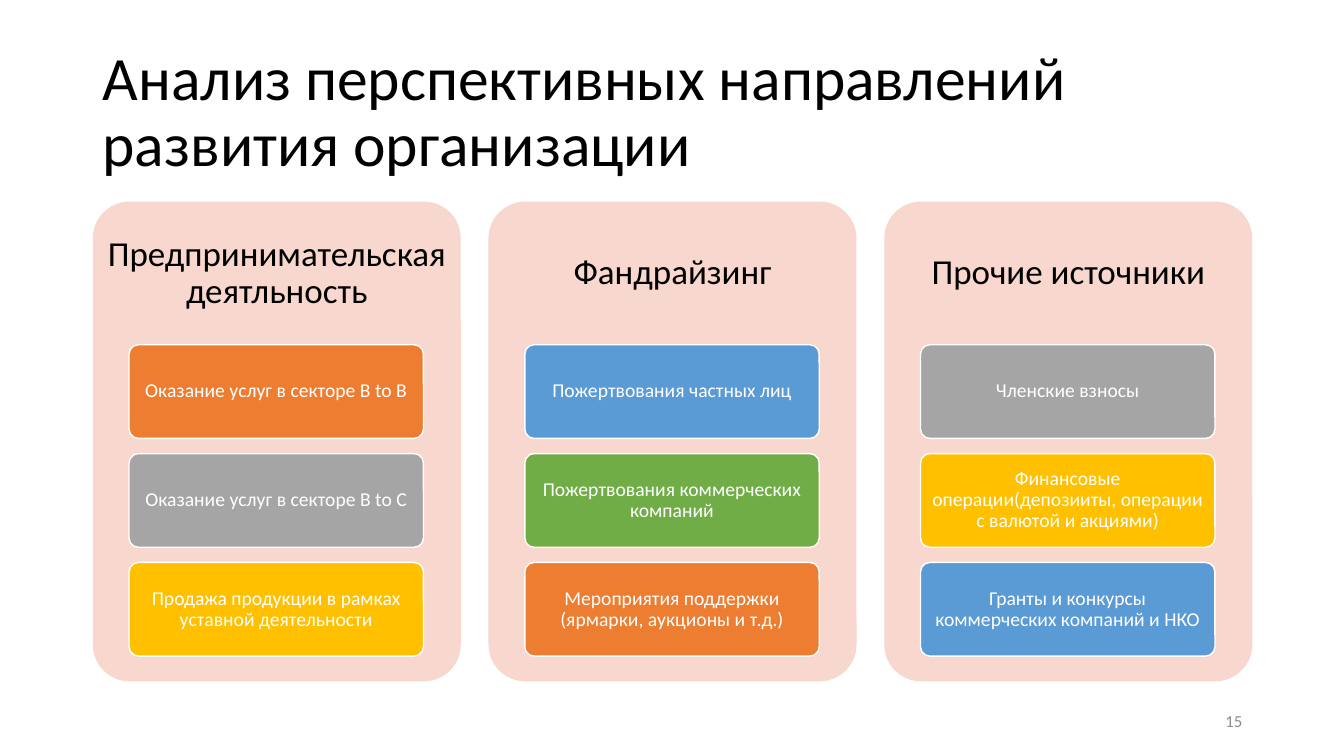
from dataclasses import dataclass

from pptx import Presentation
from pptx.dml.color import RGBColor
from pptx.enum.shapes import MSO_SHAPE
from pptx.enum.text import MSO_ANCHOR, PP_ALIGN
from pptx.util import Inches, Pt


@dataclass(frozen=True)
class Theme:
    """Colours, font and type sizes of the slide."""
    font: str = "Calibri"
    black: str = "000000"
    white: str = "FFFFFF"
    muted: str = "8C8C8C"
    panel: str = "F8D7CE"
    orange: str = "ED7D31"
    gray: str = "A5A5A5"
    gold: str = "FFC000"
    blue: str = "5B9BD5"
    green: str = "70AD47"
    title_size: int = 44
    heading_size: int = 25
    item_size: int = 14
    number_size: int = 12


class SlideBuilder:
    """Draws styled elements on one slide."""

    def __init__(self, slide, theme):
        """Keep the slide and its theme."""
        self.shapes = slide.shapes
        self.theme = theme

    def fill_text(self, frame, wording, size, color, align, insets=(0.1, 0.05), spacing=0.9):
        """Fill a text frame with one styled paragraph."""
        side, edge = map(Inches, insets)
        paragraph = frame.paragraphs[0]
        run = paragraph.add_run()
        run.text = wording
        formats = (
            (frame, {"word_wrap": True, "vertical_anchor": MSO_ANCHOR.MIDDLE,
                     "margin_left": side, "margin_right": side,
                     "margin_top": edge, "margin_bottom": edge}),
            (paragraph, {"alignment": align, "line_spacing": spacing}),
            (run.font, {"name": self.theme.font, "size": Pt(size)}),
        )
        for target, values in formats:
            for name, value in values.items():
                setattr(target, name, value)
        run.font.color.rgb = RGBColor.from_string(color)

    def text(self, box, wording, size, color, align, **layout):
        """Add a text box."""
        label = self.shapes.add_textbox(*map(Inches, box))
        self.fill_text(label.text_frame, wording, size, color, align, **layout)

    def rounded(self, box, fill, outline=None):
        """Add a filled rounded rectangle."""
        block = self.shapes.add_shape(MSO_SHAPE.ROUNDED_RECTANGLE, *map(Inches, box))
        block.adjustments[0] = 0.1
        block.shadow.inherit = False
        block.fill.solid()
        block.fill.fore_color.rgb = RGBColor.from_string(fill)
        if outline:
            block.line.color.rgb = RGBColor.from_string(outline)
            block.line.width = Pt(1)
        else:
            block.line.fill.background()
        return block

    def item(self, box, wording, fill):
        """Add a coloured card with its wording."""
        theme = self.theme
        card = self.rounded(box, fill, theme.white)
        self.fill_text(card.text_frame, wording, theme.item_size, theme.white,
                       PP_ALIGN.CENTER, insets=(0.04, 0.03))

    def direction(self, left, heading, items):
        """Add a panel with a heading and a stack of cards."""
        theme = self.theme
        self.rounded((left, 2, 3.65, 4.76), theme.panel)
        self.text((left, 2, 3.65, 1.43), heading, theme.heading_size, theme.black,
                  PP_ALIGN.CENTER, insets=(0.1, 0.1))
        for row, (wording, fill) in enumerate(items):
            self.item((left + 0.36, 3.42 + 1.08 * row, 2.92, 0.93), wording, fill)


def main():
    """Build and save the slide."""
    theme = Theme()
    deck = Presentation()
    deck.slide_width, deck.slide_height = Inches(13.33), Inches(7.5)
    builder = SlideBuilder(deck.slides.add_slide(deck.slide_layouts[6]), theme)

    directions = (
        ("Предпринимательская деятльность", (
            ("Оказание услуг в секторе B to B", theme.orange),
            ("Оказание услуг в секторе B to C", theme.gray),
            ("Продажа продукции в рамках уставной деятельности", theme.gold))),
        ("Фандрайзинг", (
            ("Пожертвования частных лиц", theme.blue),
            ("Пожертвования коммерческих компаний", theme.green),
            ("Мероприятия поддержки (ярмарки, аукционы и т.д.)", theme.orange))),
        ("Прочие источники", (
            ("Членские взносы", theme.gray),
            ("Финансовые операции(депозииты, операции с валютой и акциями)", theme.gold),
            ("Гранты и конкурсы коммерческих компаний и НКО", theme.blue))),
    )

    builder.text((0.92, 0.4, 11.5, 1.45),
                 "Анализ перспективных направлений развития организации",
                 theme.title_size, theme.black, PP_ALIGN.LEFT)
    for column, (heading, items) in enumerate(directions):
        builder.direction(0.92 + 3.925 * column, heading, items)
    builder.text((9.42, 6.95, 3, 0.4), "15", theme.number_size, theme.muted,
                 PP_ALIGN.RIGHT, spacing=1.0)
    deck.save("out.pptx")


if __name__ == "__main__":
    main()
